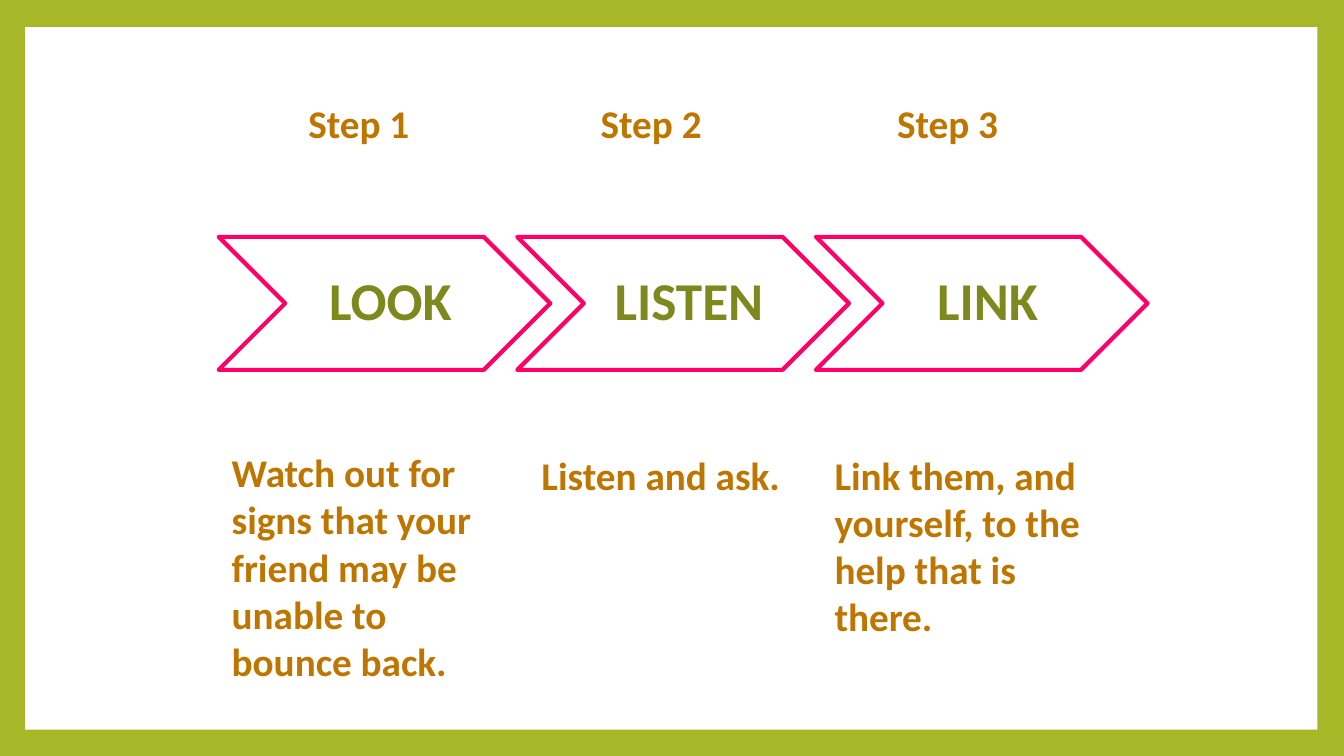
from dataclasses import dataclass
from pptx import Presentation
from pptx.dml.color import RGBColor
from pptx.enum import shapes, text
from pptx.util import Pt


@dataclass(frozen=True)
class Theme:
    font: str = "Calibri"
    frame: str = "A6B727"
    panel: str = "FFFFFF"
    edge: str = "FF0066"
    label: str = "7D891D"
    body: str = "BE7600"
    big: int = 38
    small: int = 28
    line: int = 3


THEME = Theme()
LEFT = text.PP_ALIGN.LEFT
CENTER = text.PP_ALIGN.CENTER
STEPS = [
    ("Step 1", 192.2, "LOOK",
     "Watch out for signs that your friend may be unable to bounce back.",
     (158.4, 317, 195, 210), LEFT),
    ("Step 2", 401, "LISTEN", "Listen and ask.",
     (374.4, 318.5, 195, 109), CENTER),
    ("Step 3", 612.7, "LINK",
     "Link them, and yourself, to the help that is there.",
     (589, 319, 195, 177), LEFT),
]


def color(code):
    return RGBColor.from_string(code)


def add_shape(slide, kind, box, fill=None, line=None):
    shape = slide.shapes.add_shape(kind, *map(Pt, box))
    shape.shadow.inherit = False
    if fill:
        shape.fill.solid()
        shape.fill.fore_color.rgb = color(fill)
    else:
        shape.fill.background()
    if line:
        shape.line.color.rgb = color(line)
        shape.line.width = Pt(THEME.line)
    else:
        shape.line.fill.background()


def add_text(slide, box, words, size, tint, align):
    frame = slide.shapes.add_textbox(*map(Pt, box)).text_frame
    frame.word_wrap = True
    para = frame.paragraphs[0]
    para.alignment = align
    run = para.add_run()
    run.text = words
    run.font.name = THEME.font
    run.font.size = Pt(size)
    run.font.bold = True
    run.font.color.rgb = color(tint)
    return frame


def add_arrow(slide, left, words):
    top, high = 169.2, 95
    add_shape(slide, shapes.MSO_SHAPE.CHEVRON, (left, top, 236.9, high),
              line=THEME.edge)
    frame = add_text(slide, (left + 47.4, top, 142.6, high), words,
                     THEME.big, THEME.label, CENTER)
    frame.vertical_anchor = text.MSO_ANCHOR.MIDDLE
    frame.margin_left = Pt(12)
    frame.margin_right = frame.margin_top = frame.margin_bottom = Pt(4)
    frame.paragraphs[0].line_spacing = 0.9


def main():
    deck = Presentation()
    deck.slide_width, deck.slide_height = Pt(960), Pt(540)
    slide = deck.slides.add_slide(deck.slide_layouts[6])
    back = slide.background.fill
    back.solid()
    back.fore_color.rgb = color(THEME.frame)
    add_shape(slide, shapes.MSO_SHAPE.RECTANGLE, (18, 19.4, 923, 501.8),
              fill=THEME.panel)
    for index, (step, left, label, note, box, align) in enumerate(STEPS):
        add_arrow(slide, 156.2 + 213.3 * index, label)
        add_text(slide, (left, 67.7, 128.2, 41), step,
                 THEME.small, THEME.body, CENTER)
        add_text(slide, box, note, THEME.small, THEME.body, align)
    deck.save("out.pptx")


if __name__ == "__main__":
    main()
